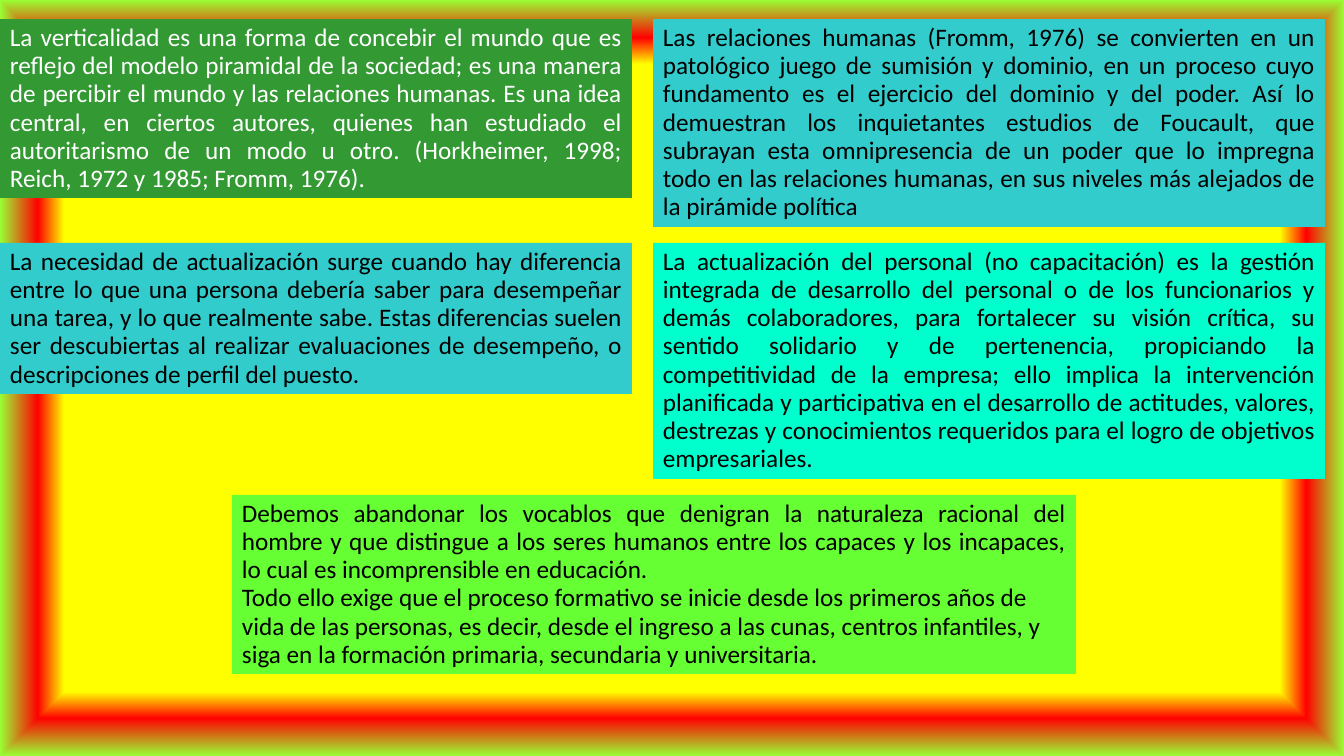
from lxml.etree import SubElement
from pptx import Presentation
from pptx.dml.color import RGBColor
from pptx.enum.shapes import MSO_SHAPE
from pptx.enum.text import MSO_ANCHOR, MSO_AUTO_SIZE, PP_ALIGN
from pptx.oxml.ns import qn
from pptx.util import Pt

WIDE, HIGH = 1344, 756
SCALE = 12192000 / WIDE

# Grid: two columns (left, width) and two row tops
COLS = [(0, 632), (653, 672)]
ROWS = [19, 243]

STOPS = [(83, "FFFF00"), (90, "FF0000"), (100, "99FF33"), (100, "66FF33")]

# Row, column, height, fill, text colour, text
CARDS = [
    (0, 0, 179, "339933", "FFFFFF",
     "La verticalidad es una forma de concebir el mundo que es reflejo del "
     "modelo piramidal de la sociedad; es una manera de percibir el mundo y "
     "las relaciones humanas. Es una idea central, en ciertos autores, "
     "quienes han estudiado el autoritarismo de un modo u otro. "
     "(Horkheimer, 1998; Reich, 1972 y 1985; Fromm, 1976)."),
    (0, 1, 208, "33CCCC", "000000",
     "Las relaciones humanas (Fromm, 1976) se convierten en un patológico "
     "juego de sumisión y dominio, en un proceso cuyo fundamento es el "
     "ejercicio del dominio y del poder. Así lo demuestran los inquietantes "
     "estudios de Foucault, que subrayan esta omnipresencia de un poder que "
     "lo impregna todo en las relaciones humanas, en sus niveles más "
     "alejados de la pirámide política"),
    (1, 0, 151, "33CCCC", "000000",
     "La necesidad de actualización surge cuando hay diferencia entre lo que "
     "una persona debería saber para desempeñar una tarea, y lo que "
     "realmente sabe. Estas diferencias suelen ser descubiertas al realizar "
     "evaluaciones de desempeño, o descripciones de perfil del puesto."),
    (1, 1, 236, "00FFCC", "000000",
     "La actualización del personal (no capacitación) es la gestión "
     "integrada de desarrollo del personal o de los funcionarios y demás "
     "colaboradores, para fortalecer su visión crítica, su sentido solidario "
     "y de pertenencia, propiciando la competitividad de la empresa; ello "
     "implica la intervención planificada y participativa en el desarrollo "
     "de actitudes, valores, destrezas y conocimientos requeridos para el "
     "logro de objetivos empresariales."),
]

CLOSING = [
    ("Debemos abandonar los vocablos que denigran la naturaleza racional del "
     "hombre y que distingue a los seres humanos entre los capaces y los "
     "incapaces, lo cual es incomprensible en educación.", PP_ALIGN.JUSTIFY),
    ("Todo ello exige que el proceso formativo se inicie desde los primeros "
     "años de vida de las personas, es decir, desde el ingreso a las cunas, "
     "centros infantiles, y siga en la formación primaria, secundaria y "
     "universitaria.", PP_ALIGN.LEFT),
]


def px(count):
    return round(count * SCALE)


def color(code):
    return RGBColor.from_string(code)


def paint_back(slide):
    """Fill the background with a gradient that runs from centre to edges."""
    fill = slide.background.fill
    fill.gradient()
    grad = slide.element.find(".//" + qn("a:gradFill"))
    for child in list(grad):
        grad.remove(child)
    stops = SubElement(grad, qn("a:gsLst"))
    for spot, code in STOPS:
        stop = SubElement(stops, qn("a:gs"), pos=str(spot * 1000))
        SubElement(stop, qn("a:srgbClr"), val=code)
    shade = SubElement(grad, qn("a:path"), path="rect")
    SubElement(shade, qn("a:fillToRect"),
               {side: "50000" for side in "ltrb"})


def add_card(slide, box, fill, ink, paras):
    """Add a filled box of text; paras holds (text, alignment) pairs."""
    card = slide.shapes.add_shape(MSO_SHAPE.RECTANGLE, *map(px, box))
    card.shadow.inherit = False
    card.fill.solid()
    card.fill.fore_color.rgb = color(fill)
    card.line.fill.background()
    frame = card.text_frame
    frame.word_wrap = True
    frame.auto_size = MSO_AUTO_SIZE.SHAPE_TO_FIT_TEXT
    frame.vertical_anchor = MSO_ANCHOR.TOP
    frame.text = "\n".join(text for text, _ in paras)
    for para, (_, align) in zip(frame.paragraphs, paras):
        para.alignment = align
        para.line_spacing = Pt(20)
        para.font.name = "Calibri"
        para.font.size = Pt(18)
        para.font.color.rgb = color(ink)


def main():
    deck = Presentation()
    deck.slide_width, deck.slide_height = px(WIDE), px(HIGH)
    slide = deck.slides.add_slide(deck.slide_layouts[6])
    paint_back(slide)

    # Four cards on the grid
    for row, col, high, fill, ink, text in CARDS:
        left, wide = COLS[col]
        add_card(slide, (left, ROWS[row], wide, high), fill, ink,
                 [(text, PP_ALIGN.JUSTIFY)])

    # Closing card below
    add_card(slide, (232, 495, 844, 179), "66FF33", "000000", CLOSING)
    deck.save("out.pptx")


if __name__ == "__main__":
    main()
